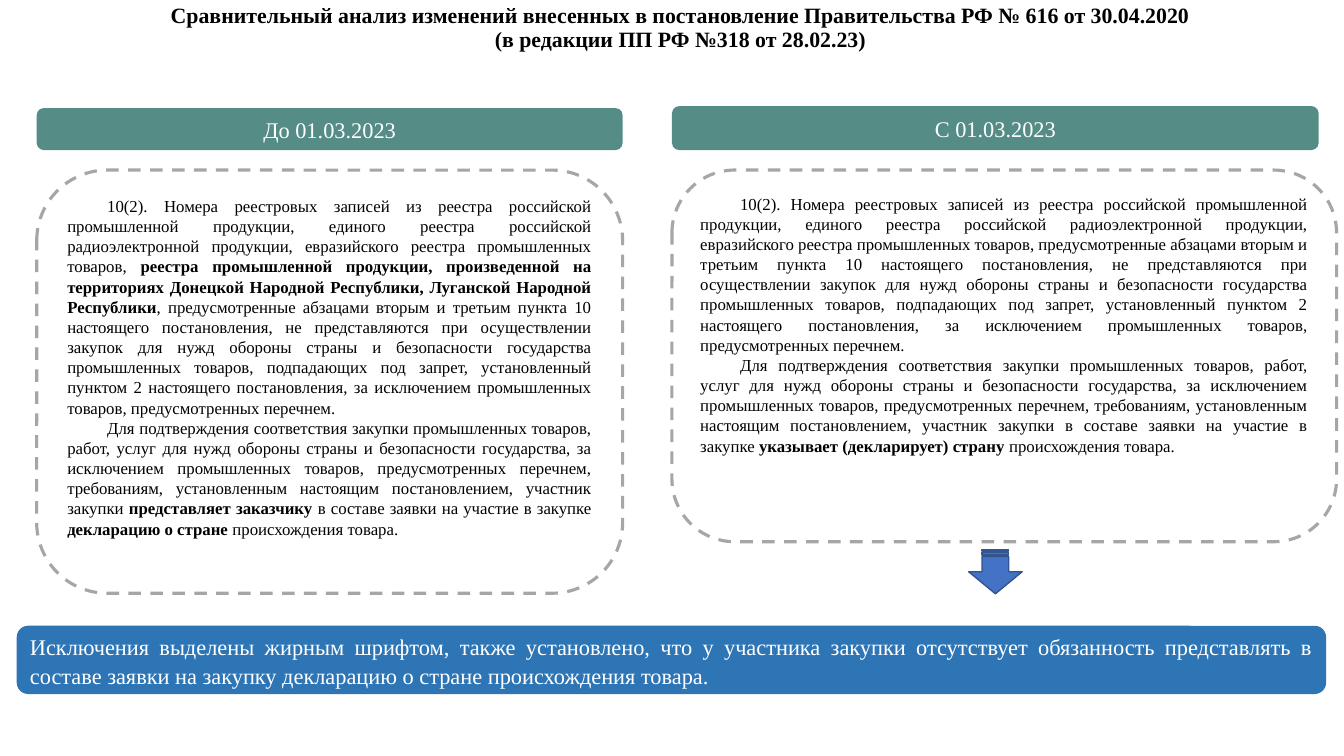
"""Builds a slide comparing two wordings of a government decree."""
from pptx import Presentation
from pptx import util as u
from pptx.dml.color import RGBColor
from pptx.enum import dml, shapes, text

PX = 9525
FONT = "Times New Roman"
BLACK = RGBColor(0x00, 0x00, 0x00)
WHITE = RGBColor(0xFF, 0xFF, 0xFF)
GREY = RGBColor(0xA6, 0xA6, 0xA6)
TEAL = RGBColor(0x56, 0x8C, 0x86)
BLUE = RGBColor(0x2E, 0x75, 0xB6)
ARROW_BLUE = RGBColor(0x44, 0x72, 0xC4)
ARROW_EDGE = RGBColor(0x32, 0x54, 0x91)

TITLE = [
    "Сравнительный анализ изменений внесенных в постановление Правительства РФ № 616 от 30.04.2020",
    "(в редакции ПП РФ №318 от 28.02.23)",
]
REGISTERS = (
    "10(2). Номера реестровых записей из реестра российской промышленной продукции, "
    "единого реестра российской радиоэлектронной продукции, "
    "евразийского реестра промышленных товаров, "
)
EXEMPTION = (
    "предусмотренные абзацами вторым и третьим пункта 10 настоящего постановления, "
    "не представляются при осуществлении закупок для нужд обороны страны и безопасности государства "
    "промышленных товаров, подпадающих под запрет, установленный пунктом 2 настоящего постановления, "
    "за исключением промышленных товаров, предусмотренных перечнем."
)
CONFIRMATION = (
    "Для подтверждения соответствия закупки промышленных товаров, работ, услуг для нужд обороны страны "
    "и безопасности государства, за исключением промышленных товаров, предусмотренных перечнем, "
    "требованиям, установленным настоящим постановлением, участник закупки "
)
IN_BID = "в составе заявки на участие в закупке "
ORIGIN = "происхождения товара."
BEFORE = [
    [
        (REGISTERS, False),
        ("реестра промышленной продукции, произведенной на территориях "
         "Донецкой Народной Республики, Луганской Народной Республики", True),
        (", " + EXEMPTION, False),
    ],
    [
        (CONFIRMATION, False),
        ("представляет заказчику ", True),
        (IN_BID, False),
        ("декларацию о стране ", True),
        (ORIGIN, False),
    ],
]
AFTER = [
    [(REGISTERS + EXEMPTION, False)],
    [
        (CONFIRMATION + IN_BID, False),
        ("указывает (декларирует) страну ", True),
        (ORIGIN, False),
    ],
]
SUMMARY = (
    "Исключения выделены жирным шрифтом, также установлено, что у участника закупки отсутствует "
    "обязанность представлять в составе заявки на закупку декларацию о стране происхождения товара."
)


def emu(box):
    """Turn a pixel box into EMU lengths."""
    return [u.Emu(length * PX) for length in box]


def style(span, size, colour, bold=False):
    """Format one run."""
    span.font.name = FONT
    span.font.size = u.Pt(size)
    span.font.color.rgb = colour
    span.font.bold = bold


def add_title(page, box):
    """Fill and place the title placeholder."""
    title = page.shapes.title
    title.left, title.top, title.width, title.height = emu(box)
    frame = title.text_frame
    frame.text = "\n".join(TITLE)
    frame.auto_size = text.MSO_AUTO_SIZE.NONE
    frame.vertical_anchor = text.MSO_ANCHOR.TOP
    for para in frame.paragraphs:
        para.alignment = text.PP_ALIGN.CENTER
        para.line_spacing = 0.9
        para.space_before = u.Pt(0)
        style(para.runs[0], 15.6, BLACK, True)


def add_bar(page, box, words, fill, alignment, spacing=1.0):
    """Draw a filled rounded bar with one paragraph in white."""
    bar = page.shapes.add_shape(shapes.MSO_SHAPE.ROUNDED_RECTANGLE, *emu(box))
    bar.shadow.inherit = False
    bar.fill.solid()
    bar.fill.fore_color.rgb = fill
    bar.line.fill.background()
    frame = bar.text_frame
    frame.text = words
    frame.word_wrap = True
    frame.vertical_anchor = text.MSO_ANCHOR.MIDDLE
    para = frame.paragraphs[0]
    para.alignment = alignment
    para.line_spacing = spacing
    style(para.runs[0], 16, WHITE)


def add_clause(page, box, clause, rounding):
    """Draw a dashed panel holding justified, indented paragraphs."""
    panel = page.shapes.add_shape(shapes.MSO_SHAPE.ROUNDED_RECTANGLE, *emu(box))
    panel.adjustments[0] = rounding
    panel.shadow.inherit = False
    panel.fill.background()
    panel.line.color.rgb = GREY
    panel.line.width = u.Pt(2.25)
    panel.line.dash_style = dml.MSO_LINE.DASH
    frame = panel.text_frame
    frame.word_wrap = True
    frame.vertical_anchor = text.MSO_ANCHOR.TOP
    for index, parts in enumerate(clause):
        para = frame.add_paragraph() if index else frame.paragraphs[0]
        para.alignment = text.PP_ALIGN.JUSTIFY
        para._p.get_or_add_pPr().set("indent", str(38 * PX))
        for words, bold in parts:
            span = para.add_run()
            span.text = words
            style(span, 12, BLACK, bold)


def add_column(page, box, header, header_size, clause, rounding):
    """Place a header bar at the top of the box and its clause panel at the bottom."""
    left, top, width, height = box
    header_width, header_height = header_size
    panel_top = 162
    panel_height = top + height - panel_top
    add_clause(page, (left, panel_top, width, panel_height), clause, rounding)
    add_bar(page, (left, top, header_width, header_height), header, TEAL, text.PP_ALIGN.CENTER)


def add_arrow(page, box):
    """Draw the striped arrow that points down to the summary."""
    arrow = page.shapes.add_shape(shapes.MSO_SHAPE.STRIPED_RIGHT_ARROW, *emu(box))
    arrow.rotation = 90
    arrow.shadow.inherit = False
    arrow.fill.solid()
    arrow.fill.fore_color.rgb = ARROW_BLUE
    arrow.line.color.rgb = ARROW_EDGE
    arrow.line.width = u.Pt(1)


def main():
    """Build and save the deck."""
    deck = Presentation()
    deck.slide_width, deck.slide_height = emu((1280, 720))
    page = deck.slides.add_slide(deck.slide_layouts[5])
    add_title(page, (40, 0, 1216, 96))
    add_column(page, (35, 103, 558, 462), "До 01.03.2023", (558, 40), BEFORE, 0.1667)
    add_column(page, (640, 101, 633, 415), "С 01.03.2023", (616, 42), AFTER, 0.169)
    add_bar(page, (16, 596, 1247, 65), SUMMARY, BLUE, text.PP_ALIGN.JUSTIFY, 1.07)
    add_arrow(page, (927, 519, 42, 51))
    deck.save("out.pptx")


if __name__ == "__main__":
    main()
